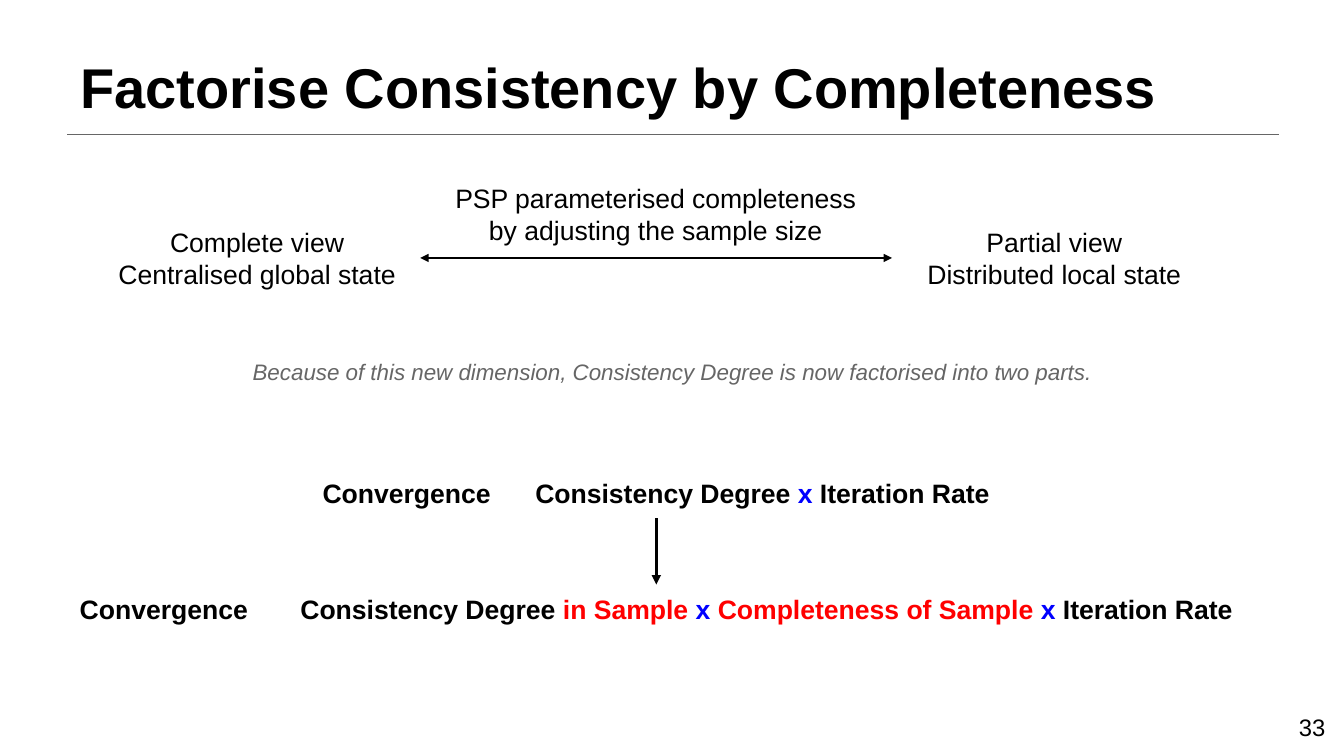
from lxml.etree import SubElement
from pptx import Presentation
from pptx.dml.color import RGBColor
from pptx.enum.shapes import MSO_CONNECTOR
from pptx.enum.text import MSO_ANCHOR, MSO_AUTO_SIZE, PP_ALIGN
from pptx.oxml.ns import qn
from pptx.util import Cm, Pt

BLACK = RGBColor(0x00, 0x00, 0x00)
GRAY = RGBColor(0x66, 0x66, 0x66)
RED = RGBColor(0xFF, 0x00, 0x00)
BLUE = RGBColor(0x00, 0x00, 0xFF)

FONT = "Arial"
INSET = Cm(0.33)

TITLE = "Factorise Consistency by Completeness"
TITLE_BOX = (1.7, 0.76, 30.48, 2.59)

LABELS = [
    (["Complete view", "Centralised global state"], (2.39, 5.41, 8.18, 2.16)),
    (["Partial view", "Distributed local state"], (22.48, 5.41, 8.18, 2.16)),
    (["PSP parameterised completeness by adjusting the sample size"], (11, 4.32, 11.05, 2.16)),
]
REMARK = "Because of this new dimension, Consistency Degree is now factorised into two parts."
REMARK_BOX = (5.77, 8.64, 22.35, 1.45)
PAGE_NUMBER = "33"
PAGE_NUMBER_BOX = (31.7, 17.6, 2.03, 1.45)

FORMULAS = [
    ((7.8, 11.79, 17.63, 1.24), 5.36, [
        ("Convergence\tConsistency Degree ", BLACK),
        ("x", BLUE),
        (" Iteration Rate", BLACK),
    ]),
    ((1.68, 14.73, 29.79, 1.24), 5.56, [
        ("Convergence\tConsistency Degree ", BLACK),
        ("in Sample ", RED),
        ("x ", BLUE),
        ("Completeness of Sample ", RED),
        ("x", BLUE),
        (" Iteration Rate", BLACK),
    ]),
]

LINES = [
    ((1.7, 3.38, 32.23, 3.38), GRAY, 0.75, []),
    ((10.59, 6.5, 22.48, 6.5), BLACK, 1.5, ["a:headEnd", "a:tailEnd"]),
    ((16.54, 13.06, 16.54, 14.73), BLACK, 2.25, ["a:tailEnd"]),
]


def format_frame(text_frame, anchor):
    text_frame.word_wrap = True
    text_frame.auto_size = MSO_AUTO_SIZE.NONE
    text_frame.vertical_anchor = anchor
    text_frame.margin_left = text_frame.margin_right = INSET
    text_frame.margin_top = text_frame.margin_bottom = INSET


def format_run(run, size, color, bold=False, italic=False):
    run.font.name = FONT
    run.font.size = Pt(size)
    run.font.color.rgb = color
    run.font.bold = bold
    run.font.italic = italic


def add_box(slide, box):
    text_frame = slide.shapes.add_textbox(*map(Cm, box)).text_frame
    format_frame(text_frame, MSO_ANCHOR.MIDDLE)
    return text_frame


def add_text(slide, lines, box, size=19, color=BLACK, alignment=PP_ALIGN.CENTER, italic=False):
    text_frame = add_box(slide, box)
    text_frame.text = "\n".join(lines)
    for paragraph in text_frame.paragraphs:
        paragraph.alignment = alignment
        format_run(paragraph.runs[0], size, color, italic=italic)


def add_title(slide):
    title = slide.shapes.title
    title.left, title.top, title.width, title.height = map(Cm, TITLE_BOX)
    format_frame(title.text_frame, MSO_ANCHOR.BOTTOM)
    title.text_frame.text = TITLE
    paragraph = title.text_frame.paragraphs[0]
    paragraph.alignment = PP_ALIGN.LEFT
    format_run(paragraph.runs[0], 40, BLACK, bold=True)


def add_formula(slide, box, tab_position, parts):
    paragraph = add_box(slide, box).paragraphs[0]
    paragraph.alignment = PP_ALIGN.LEFT
    tab_list = SubElement(paragraph._p.get_or_add_pPr(), qn("a:tabLst"))
    SubElement(tab_list, qn("a:tab"), pos=str(Cm(tab_position)), algn="l")
    for text, color in parts:
        run = paragraph.add_run()
        run.text = text
        format_run(run, 19, color, bold=True)


def add_line(slide, ends, color, width, arrowheads):
    connector = slide.shapes.add_connector(MSO_CONNECTOR.STRAIGHT, *map(Cm, ends))
    connector.line.color.rgb = color
    connector.line.width = Pt(width)
    for arrowhead in arrowheads:
        SubElement(connector.line._get_or_add_ln(), qn(arrowhead), type="triangle")
    SubElement(connector._element.spPr, qn("a:effectLst"))


def main():
    presentation = Presentation()
    presentation.slide_width = Cm(33.87)
    presentation.slide_height = Cm(19.05)
    slide = presentation.slides.add_slide(presentation.slide_layouts[5])
    add_title(slide)
    for line in LINES:
        add_line(slide, *line)
    for lines, box in LABELS:
        add_text(slide, lines, box)
    add_text(slide, [REMARK], REMARK_BOX, size=16, color=GRAY, italic=True)
    for formula in FORMULAS:
        add_formula(slide, *formula)
    add_text(slide, [PAGE_NUMBER], PAGE_NUMBER_BOX, size=17, alignment=PP_ALIGN.RIGHT)
    presentation.save("out.pptx")


if __name__ == "__main__":
    main()
